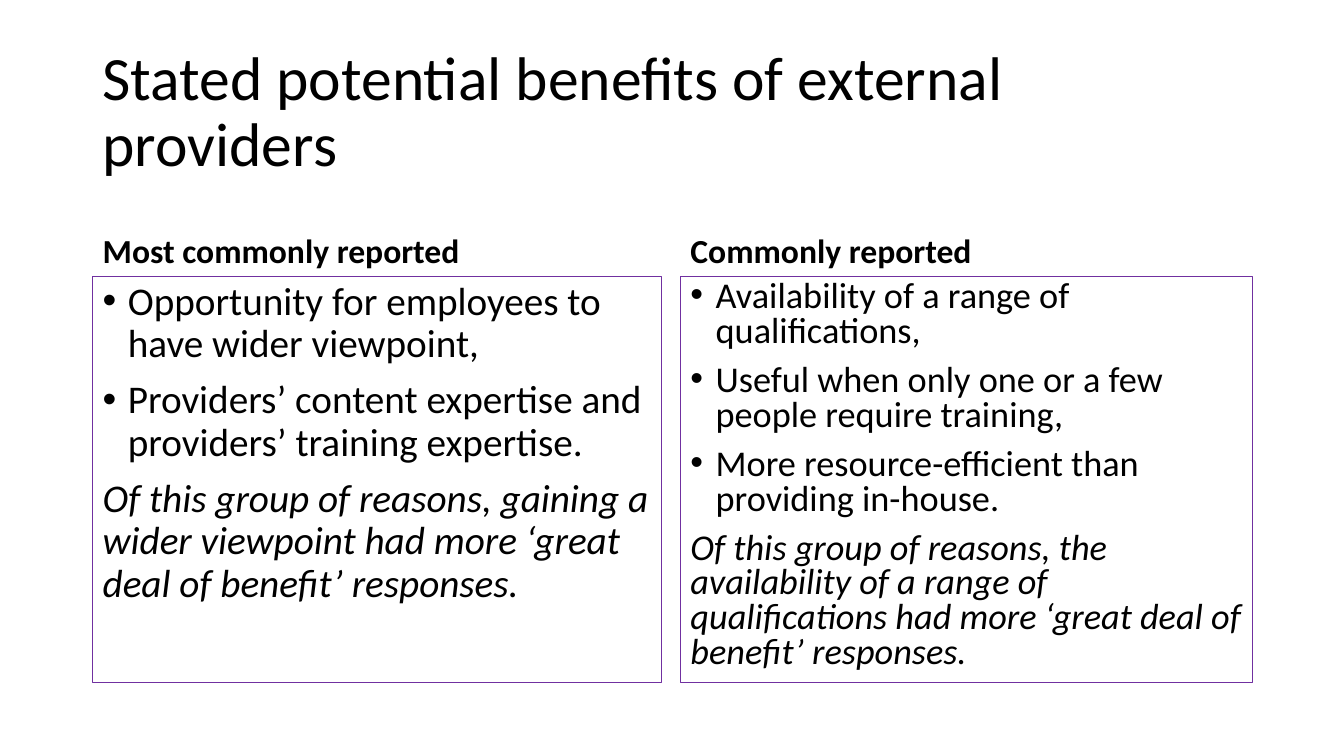
from dataclasses import dataclass

from lxml import etree
from pptx import Presentation
from pptx import util as u
from pptx.dml.color import RGBColor
from pptx.enum import shapes, text
from pptx.oxml.ns import qn

PX = 9144  # EMU per px, 100 px to the inch


@dataclass(frozen=True)
class Theme:
    font: str = "Calibri"
    ink: RGBColor = RGBColor(0, 0, 0)
    frame: RGBColor = RGBColor(0x70, 0x30, 0xA0)
    title: float = 44
    head: float = 24
    indent: int = 25


THEME = Theme()

# Left, width, heading, type size, line spacing, bullets, closing remark
COLUMNS = [
    (92, 564, "Most commonly reported", 28, 0.9,
     ["Opportunity for employees to have wider viewpoint,",
      "Providers’ content expertise and providers’ training expertise."],
     "Of this group of reasons, gaining a wider viewpoint had more "
     "‘great deal of benefit’ responses."),
    (675, 567, "Commonly reported", 25.9, 0.8,
     ["Availability of a range of qualifications,",
      "Useful when only one or a few people require training,",
      "More resource-efficient than providing in-house."],
     "Of this group of reasons, the availability of a range of "
     "qualifications had more ‘great deal of benefit’ responses."),
]


def px(*nums):
    return [u.Emu(n * PX) for n in nums]


def style(para, words, size, line=0.9, before=0, after=0):
    para.text = words
    para.alignment = text.PP_ALIGN.LEFT
    para.line_spacing = line
    para.space_before = u.Pt(before)
    para.space_after = u.Pt(after)
    para.font.name = THEME.font
    para.font.size = u.Pt(size)
    para.font.color.rgb = THEME.ink


def bullet(para):
    props = para._p.get_or_add_pPr()
    indent = THEME.indent * PX
    props.set("marL", str(indent))
    props.set("indent", str(-indent))
    etree.SubElement(props, qn("a:buFont")).set("typeface", "Arial")
    etree.SubElement(props, qn("a:buChar")).set("char", "•")
    # Default run properties come after the bullet
    props.append(props.find(qn("a:defRPr")))


def label(slide, box, words, size, anchor, bold=False, before=0, after=0):
    frame = slide.shapes.add_textbox(*px(*box)).text_frame
    frame.word_wrap = True
    frame.vertical_anchor = anchor
    para = frame.paragraphs[0]
    style(para, words, size, before=before, after=after)
    para.font.bold = bold


def panel(slide, box, size, line, points, remark):
    shape = slide.shapes.add_shape(shapes.MSO_SHAPE.RECTANGLE, *px(*box))
    shape.shadow.inherit = False
    shape.fill.background()
    shape.line.color.rgb = THEME.frame
    shape.line.width = u.Pt(0.75)
    frame = shape.text_frame
    frame.word_wrap = True
    frame.vertical_anchor = text.MSO_ANCHOR.TOP
    para = frame.paragraphs[0]
    for point in points:
        style(para, point, size, line, before=10)
        bullet(para)
        para = frame.add_paragraph()
    style(para, remark, size, line, before=10)
    para.font.italic = True


def main():
    deck = Presentation()
    deck.slide_width, deck.slide_height = px(1333, 750)
    slide = deck.slides.add_slide(deck.slide_layouts[6])

    # Title
    label(slide, (92, 40, 1150, 145),
          "Stated potential benefits of external providers",
          THEME.title, text.MSO_ANCHOR.MIDDLE)

    # Two columns: heading above framed list
    for left, width, head, size, line, points, remark in COLUMNS:
        label(slide, (left, 184, width, 90), head, THEME.head,
              text.MSO_ANCHOR.BOTTOM, bold=True, before=10, after=6)
        panel(slide, (left, 274, width, 403), size, line, points, remark)

    deck.save("out.pptx")


if __name__ == "__main__":
    main()
